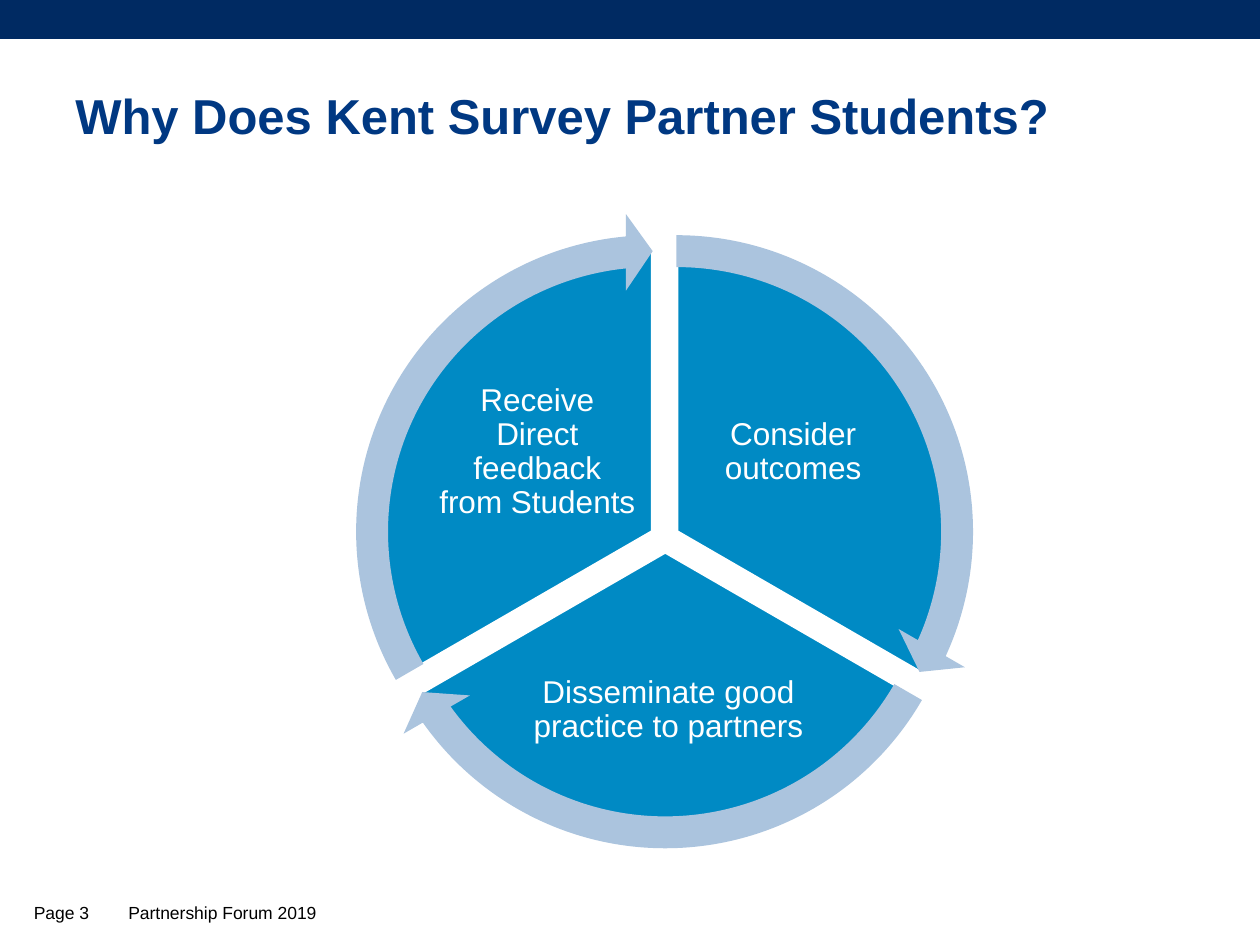
import pptx
import pptx.util
import pptx.dml.color
import pptx.enum.shapes
import pptx.enum.text
from dataclasses import dataclass

Inches = pptx.util.Inches
Shapes = pptx.enum.shapes.MSO_SHAPE
Anchor = pptx.enum.text.MSO_ANCHOR
Align = pptx.enum.text.PP_ALIGN


@dataclass(frozen=True)
class Theme:
    font: str = "Arial"
    banner: str = "002A62"
    title: str = "003882"
    wedge: str = "008AC4"
    arrow: str = "ABC4DE"
    white: str = "FFFFFF"
    black: str = "000000"
    title_size: int = 28
    label_size: int = 18
    footer_size: int = 10


theme = Theme()

presentation = pptx.Presentation()
presentation.slide_width = Inches(10)
presentation.slide_height = Inches(7.5)
slide = presentation.slides.add_slide(presentation.slide_layouts[6])


def add_shape(kind, left, top, width, height, color, adjustments=()):
    shape = slide.shapes.add_shape(
        kind, Inches(left), Inches(top), Inches(width), Inches(height))
    shape.shadow.inherit = False
    shape.fill.solid()
    shape.fill.fore_color.rgb = pptx.dml.color.RGBColor.from_string(color)
    shape.line.fill.background()
    for index, value in enumerate(adjustments):
        shape.adjustments[index] = value
    return shape


def add_text(text, left, top, width, height, size, color, anchor, bold=False):
    box = slide.shapes.add_textbox(
        Inches(left), Inches(top), Inches(width), Inches(height))
    frame = box.text_frame
    frame.word_wrap = True
    frame.vertical_anchor = anchor
    run = frame.paragraphs[0].add_run()
    run.text = text
    run.font.name = theme.font
    run.font.size = pptx.util.Pt(size)
    run.font.bold = bold
    run.font.color.rgb = pptx.dml.color.RGBColor.from_string(color)
    return frame


# Banner, title and footer
add_shape(Shapes.RECTANGLE, 0, 0, 10, 0.31, theme.banner)
add_text("Why Does Kent Survey Partner Students?", 0.5, 0.6, 9.07, 0.63,
         theme.title_size, theme.title, Anchor.MIDDLE, bold=True)
add_text("Partnership Forum 2019", 0.92, 7.11, 6.62, 0.3,
         theme.footer_size, theme.black, Anchor.TOP)
add_text("Page 3", 0.17, 7.1, 0.74, 0.29,
         theme.footer_size, theme.black, Anchor.MIDDLE)

# Cycle: wedge position and angles, label and its box, arrow angles
wedge_size = 4.5
arrow_size = 5.06
arrow_offset = (arrow_size - wedge_size) / 2
stages = [
    (3.12, 1.97, (162, 18), "Consider outcomes",
     (5.49, 2.92, 1.61, 1.34), (14.72, 161.99)),
    (3.03, 2.13, (18, 90), "Disseminate good practice to partners",
     (4.1, 5.05, 2.41, 1.18), (86.72, 18)),
    (2.93, 1.97, (90, 162), "Receive Direct feedback from Students",
     (3.46, 2.92, 1.61, 1.34), (158.73, 90)),
]

# Wedges with their labels
for left, top, angles, label, label_box, _ in stages:
    wedge = add_shape(Shapes.PIE, left, top, wedge_size, wedge_size,
                      theme.wedge, angles)
    wedge.line.color.rgb = pptx.dml.color.RGBColor.from_string(theme.white)
    wedge.line.width = pptx.util.Pt(2)
    frame = add_text(label, *label_box, theme.label_size, theme.white,
                     Anchor.MIDDLE)
    frame.margin_left = frame.margin_right = Inches(0.02)
    frame.margin_top = frame.margin_bottom = Inches(0.03)
    frame.paragraphs[0].alignment = Align.CENTER
    frame.paragraphs[0].line_spacing = 0.9

# Arrows around the wedges
for left, top, _, _, _, (end_angle, start_angle) in stages:
    add_shape(Shapes.CIRCULAR_ARROW, left - arrow_offset, top - arrow_offset,
              arrow_size, arrow_size, theme.arrow,
              (0.05, 3.28, end_angle, start_angle, 0.06))

presentation.save("out.pptx")
